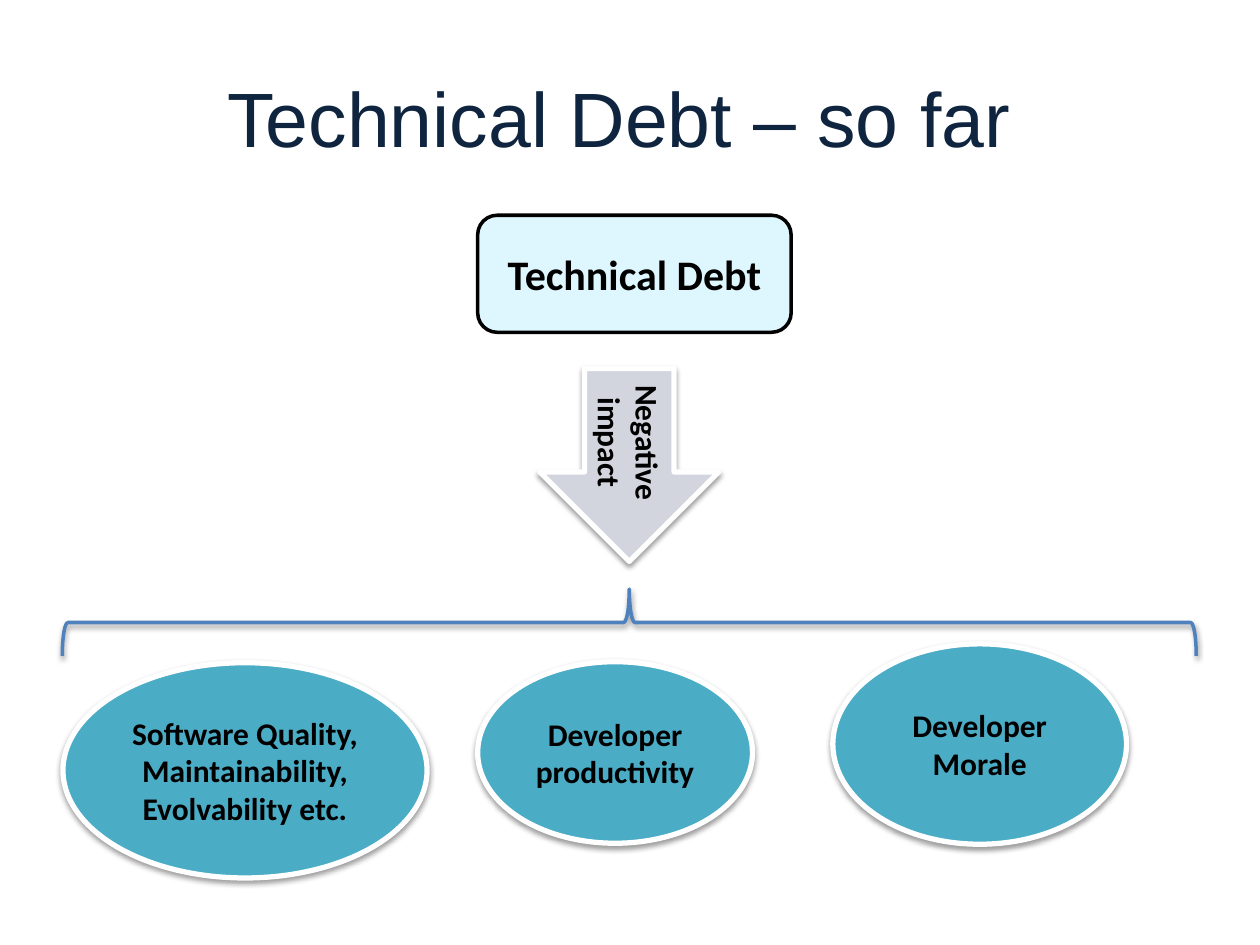
from lxml.etree import SubElement
from pptx import Presentation
from pptx.dml.color import RGBColor
from pptx.enum.shapes import MSO_SHAPE
from pptx.enum.text import MSO_ANCHOR, PP_ALIGN
from pptx.oxml.ns import qn
from pptx.util import Cm, Pt

BLACK = RGBColor(0x00, 0x00, 0x00)
WHITE = RGBColor(0xFF, 0xFF, 0xFF)
NAVY = RGBColor(0x0F, 0x24, 0x3E)
TEAL = RGBColor(0x4B, 0xAC, 0xC6)
ICE = RGBColor(0xDE, 0xF7, 0xFE)
GREY = RGBColor(0xD2, 0xD5, 0xDD)
BLUE = RGBColor(0x4F, 0x81, 0xBD)


class DebtSlide:
    """Draws the elements of the technical debt diagram in one style."""

    title_font = "Arial"
    body_font = "Calibri"

    def __init__(self, presentation):
        self.slide = presentation.slides.add_slide(presentation.slide_layouts[6])

    def set_text(self, shape, text, font_name, size, color, bold):
        frame = shape.text_frame
        frame.word_wrap = True
        frame.vertical_anchor = MSO_ANCHOR.MIDDLE
        frame.text = text
        for paragraph in frame.paragraphs:
            paragraph.alignment = PP_ALIGN.CENTER
            font = paragraph.font
            font.name, font.size, font.bold = font_name, Pt(size), bold
            font.color.rgb = color

    def title(self, text, box):
        shape = self.slide.shapes.add_textbox(*map(Cm, box))
        self.set_text(shape, text, self.title_font, 44, NAVY, False)

    def add_shadow(self, shape):
        effects = shape._element.spPr.find(qn("a:effectLst"))
        shadow = SubElement(effects, qn("a:outerShdw"), blurRad=str(Pt(3.1)),
                            dist=str(Pt(1.6)), dir="5400000", rotWithShape="0")
        color = SubElement(shadow, qn("a:srgbClr"), val=str(BLACK))
        SubElement(color, qn("a:alpha"), val="38000")

    def outline(self, kind, box, line_color, line_width, rotation=0, shadow=True):
        shape = self.slide.shapes.add_shape(kind, *map(Cm, box))
        shape.rotation = rotation
        shape.shadow.inherit = False
        shape.fill.background()
        shape.line.color.rgb = line_color
        shape.line.width = Pt(line_width)
        if shadow:
            self.add_shadow(shape)
        return shape

    def block(self, kind, text, box, fill, line_color=WHITE, line_width=3,
              size=18, rotation=0, shadow=True):
        shape = self.outline(kind, box, line_color, line_width, rotation, shadow)
        shape.fill.solid()
        shape.fill.fore_color.rgb = fill
        self.set_text(shape, text, self.body_font, size, BLACK, True)

    def impact(self, text, box):
        self.block(MSO_SHAPE.OVAL, text, box, TEAL)


def main():
    presentation = Presentation()
    presentation.slide_width, presentation.slide_height = Cm(25.4), Cm(19.05)
    debt = DebtSlide(presentation)
    debt.impact("Software Quality,\vMaintainability,\nEvolvability etc.",
                (1.27, 13.36, 7.34, 4.34))
    debt.title("Technical Debt – so far ", (1.27, 0.76, 22.86, 3.18))
    debt.block(MSO_SHAPE.ROUNDED_RECTANGLE, "Technical Debt", (9.63, 4.34, 6.32, 2.36),
               ICE, BLACK, 2, size=24, shadow=False)
    debt.block(MSO_SHAPE.RIGHT_ARROW, "Negative impact", (10.74, 7.57, 3.89, 3.61),
               GREY, rotation=90)
    debt.impact("Developer productivity", (9.63, 13.34, 5.54, 3.66))
    debt.impact("Developer Morale", (16.79, 12.98, 5.92, 4.04))
    debt.outline(MSO_SHAPE.LEFT_BRACE, (12.01, 1.12, 1.35, 22.86), BLUE, 2, rotation=90)
    presentation.save("out.pptx")


if __name__ == "__main__":
    main()
